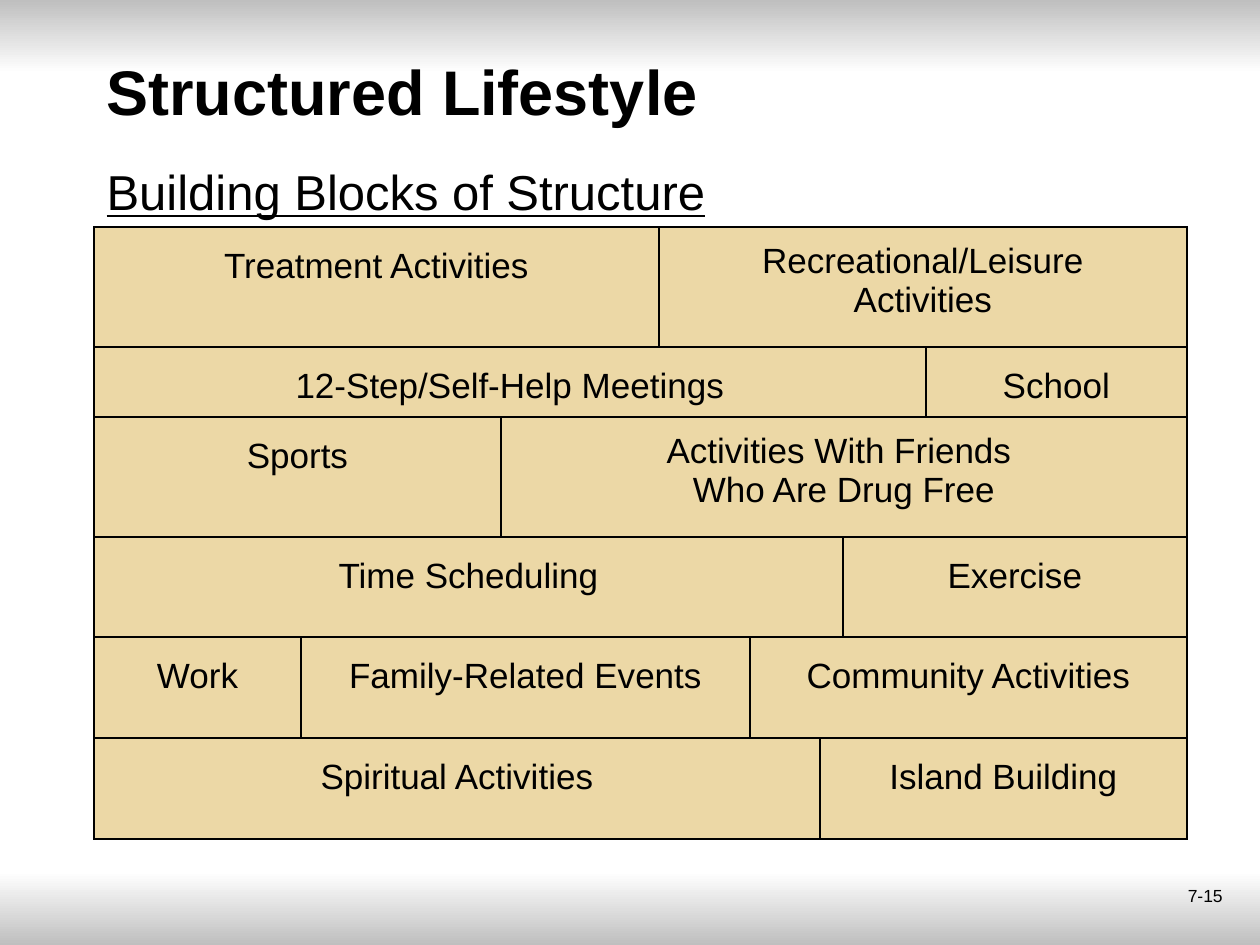
from lxml import etree
from pptx import Presentation
from pptx.dml.color import RGBColor
from pptx.enum.shapes import MSO_SHAPE
from pptx.enum.text import MSO_ANCHOR, PP_ALIGN
from pptx.oxml.ns import qn
from pptx.util import Emu, Pt

RECTANGLE = MSO_SHAPE.RECTANGLE
TOP, MIDDLE = MSO_ANCHOR.TOP, MSO_ANCHOR.MIDDLE
LEFT, CENTER, RIGHT = PP_ALIGN.LEFT, PP_ALIGN.CENTER, PP_ALIGN.RIGHT

BLACK = RGBColor(0x00, 0x00, 0x00)
WHITE = RGBColor(0xFF, 0xFF, 0xFF)
GRAY = RGBColor(0xBF, 0xBF, 0xBF)
SAND = RGBColor(0xEC, 0xD8, 0xA6)

FONT = "Arial"
PX_PER_INCH = 126
SLIDE_WIDTH, SLIDE_HEIGHT = 1260, 945
BAND_HEIGHT = 73
TITLE_LEFT, TITLE_WIDTH, TITLE_HEIGHT = 94, 1061, 110

COLUMN_WIDTHS = [207, 200, 158, 91, 70, 23, 83, 261]
ROW_HEIGHTS = [120, 70, 120, 100, 101, 101]

# Each block is (text, columns spanned); "\n" starts a paragraph, "\v" a line
BLOCK_ROWS = [
    [("Treatment Activities", 3), ("Recreational/Leisure\vActivities", 5)],
    [("12-Step/Self-Help Meetings", 7), ("School", 1)],
    [("Sports", 2), ("Activities With Friends \nWho Are Drug Free", 6)],
    [("Time Scheduling", 6), ("Exercise", 2)],
    [("Work", 1), ("Family-Related Events", 3), ("Community Activities", 4)],
    [("Spiritual Activities", 5), ("Island Building", 3)],
]


def px(length):
    return Emu(round(length * 914400 / PX_PER_INCH))


def place(shape, left, top, width, height):
    shape.left, shape.top = px(left), px(top)
    shape.width, shape.height = px(width), px(height)


def format_paragraph(paragraph, size, alignment):
    paragraph.alignment = alignment
    paragraph.font.name = FONT
    paragraph.font.size = Pt(size)
    paragraph.font.color.rgb = BLACK


def write_line(shape, text, size, alignment=LEFT, anchor=MIDDLE):
    frame = shape.text_frame
    frame.word_wrap = True
    frame.vertical_anchor = anchor
    frame.text = text
    paragraph = frame.paragraphs[0]
    format_paragraph(paragraph, size, alignment)
    return paragraph


def add_band(slide, top, start_color, end_color):
    band = slide.shapes.add_shape(
        RECTANGLE, 0, px(top), px(SLIDE_WIDTH), px(BAND_HEIGHT))
    band.shadow.inherit = False
    band.line.fill.background()
    band.fill.gradient()
    band.fill.gradient_angle = 270
    for stop, position, color in zip(
            band.fill.gradient_stops, (0, 1), (start_color, end_color)):
        stop.position = position
        stop.color.rgb = color


def add_text(slide, box, text, size, **options):
    shape = slide.shapes.add_textbox(*map(px, box))
    return write_line(shape, text, size, **options)


def set_borders(cell):
    properties = cell._tc.get_or_add_tcPr()
    for index, side in enumerate(("a:lnL", "a:lnR", "a:lnT", "a:lnB")):
        line = etree.Element(qn(side), w=str(Pt(1)))
        fill = etree.SubElement(line, qn("a:solidFill"))
        etree.SubElement(fill, qn("a:srgbClr"), val=str(BLACK))
        properties.insert(index, line)


def format_block(cell, text):
    cell.text = text
    two_lines = "\n" in text or "\v" in text
    cell.margin_left = cell.margin_right = px(9)
    cell.margin_top = px(15 if two_lines else 0)
    cell.margin_bottom = 0
    cell.vertical_anchor = TOP
    for paragraph in cell.text_frame.paragraphs:
        format_paragraph(paragraph, 20, CENTER)
        paragraph.line_spacing = 1.0 if two_lines else 1.5
    cell.fill.solid()
    cell.fill.fore_color.rgb = SAND
    set_borders(cell)


def add_block_table(slide, left, top):
    table = slide.shapes.add_table(
        len(ROW_HEIGHTS), len(COLUMN_WIDTHS), px(left), px(top),
        px(sum(COLUMN_WIDTHS)), px(sum(ROW_HEIGHTS))).table
    table.first_row = table.horz_banding = False
    for column, width in zip(table.columns, COLUMN_WIDTHS):
        column.width = px(width)
    for row, height in zip(table.rows, ROW_HEIGHTS):
        row.height = px(height)

    for row_index, blocks in enumerate(BLOCK_ROWS):
        start = 0
        for text, span in blocks:
            cell = table.cell(row_index, start)
            if span > 1:
                cell.merge(table.cell(row_index, start + span - 1))
            format_block(cell, text)
            start += span


def main():
    presentation = Presentation()
    presentation.slide_width = px(SLIDE_WIDTH)
    presentation.slide_height = px(SLIDE_HEIGHT)
    slide = presentation.slides.add_slide(presentation.slide_layouts[5])

    # Shaded bands at both edges
    add_band(slide, SLIDE_HEIGHT - BAND_HEIGHT, WHITE, GRAY)
    add_band(slide, 0, GRAY, WHITE)

    # Headings
    title = slide.shapes.title
    place(title, TITLE_LEFT, 136, TITLE_WIDTH, TITLE_HEIGHT)
    write_line(title, "Building Blocks of Structure", 28).font.underline = True
    heading = add_text(slide, (TITLE_LEFT, 35, TITLE_WIDTH, TITLE_HEIGHT),
                       "Structured Lifestyle", 36)
    heading.font.bold = True

    # Wall of building blocks
    add_block_table(slide, TITLE_LEFT, 227)

    # Page number
    add_text(slide, (941, 879, 294, 66), "7-15", 10,
             alignment=RIGHT, anchor=TOP)

    presentation.save("out.pptx")


if __name__ == "__main__":
    main()
